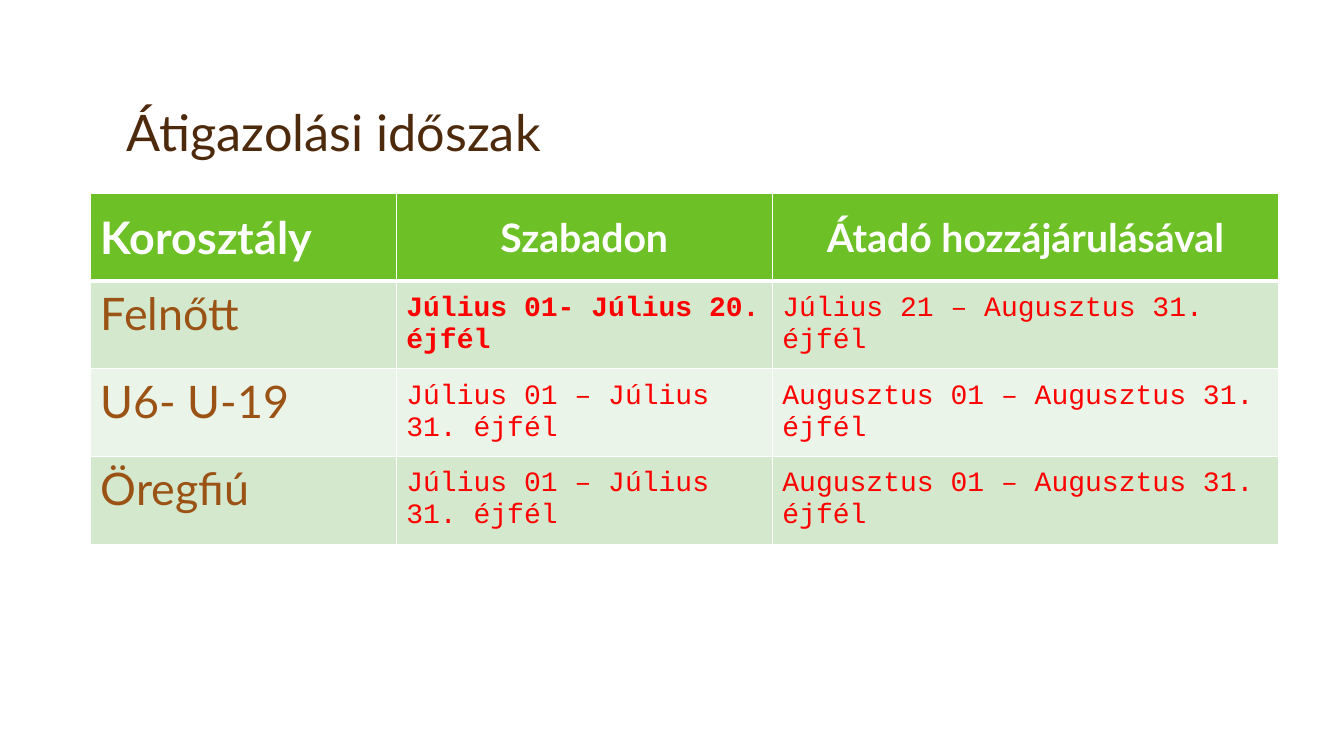
from lxml import etree
from pptx import Presentation
from pptx.dml.color import RGBColor
from pptx.enum.text import MSO_ANCHOR, PP_ALIGN
from pptx.oxml.ns import qn
from pptx.util import Inches, Pt

TOP, MIDDLE, BOTTOM = MSO_ANCHOR.TOP, MSO_ANCHOR.MIDDLE, MSO_ANCHOR.BOTTOM
LEFT, CENTER = PP_ALIGN.LEFT, PP_ALIGN.CENTER

WHITE = RGBColor(0xFF, 0xFF, 0xFF)
DARK_BROWN = RGBColor(0x4D, 0x2A, 0x0B)
BROWN = RGBColor(0x9A, 0x53, 0x15)
RED = RGBColor(0xFF, 0x00, 0x00)
GREEN = RGBColor(0x6D, 0xC0, 0x25)
BANDS = (RGBColor(0xD4, 0xE8, 0xCD), RGBColor(0xEB, 0xF4, 0xE8))

TITLE = "Átigazolási időszak"
HEADER = ("Korosztály", "Szabadon", "Átadó hozzájárulásával")
PERIODS = [
    ("Felnőtt", "Július 01- Július 20. éjfél", "Július 21 – Augusztus 31. éjfél"),
    ("U6- U-19", "Július 01 – Július 31. éjfél", "Augusztus 01 – Augusztus 31. éjfél"),
    ("Öregfiú", "Július 01 – Július 31. éjfél", "Augusztus 01 – Augusztus 31. éjfél"),
]
BOLD_PERIOD = (1, 1)
COLUMN_WIDTHS = (3.03, 3.73, 5.02)
ROW_HEIGHT = 0.87


def write(para, text, font, size, color, bold=False):
    span = para.add_run()
    span.text = text
    span.font.name = font
    span.font.size = Pt(size)
    span.font.color.rgb = color
    span.font.bold = bold


def add_borders(cell, bottom_width):
    properties = cell._tc.get_or_add_tcPr()
    for side, width in (("L", 1), ("R", 1), ("T", 1), ("B", bottom_width)):
        line = etree.SubElement(properties, qn(f"a:ln{side}"), w=str(Pt(width)))
        fill = etree.SubElement(line, qn("a:solidFill"))
        etree.SubElement(fill, qn("a:srgbClr"), val=str(WHITE))


def add_title(page):
    box = page.shapes.add_textbox(Inches(1.16), Inches(0.33), Inches(11), Inches(1.33))
    frame = box.text_frame
    frame.word_wrap = True
    frame.vertical_anchor = BOTTOM
    para = frame.paragraphs[0]
    para.line_spacing = 0.9
    write(para, TITLE, "Lato", 36, DARK_BROWN)


def add_period_table(page):
    rows = [HEADER] + PERIODS
    table = page.shapes.add_table(
        len(rows), len(HEADER), Inches(0.9), Inches(1.92),
        Inches(sum(COLUMN_WIDTHS)), Inches(ROW_HEIGHT * len(rows))).table
    for column, width in zip(table.columns, COLUMN_WIDTHS):
        column.width = Inches(width)
    for r, texts in enumerate(rows):
        table.rows[r].height = Inches(ROW_HEIGHT)
        is_header = r == 0
        for c, text in enumerate(texts):
            cell = table.cell(r, c)
            is_label = c == 0
            add_borders(cell, 3 if is_header else 1)
            cell.fill.solid()
            cell.fill.fore_color.rgb = GREEN if is_header else BANDS[(r - 1) % 2]
            cell.vertical_anchor = TOP if is_label and not is_header else MIDDLE
            para = cell.text_frame.paragraphs[0]
            para.alignment = CENTER if is_header and not is_label else LEFT
            if is_header:
                write(para, text, "Lato", 32 if is_label else 28, WHITE, True)
            elif is_label:
                write(para, text, "Lato", 32, BROWN)
            else:
                write(para, text, "Courier New", 20, RED, (r, c) == BOLD_PERIOD)


def main():
    deck = Presentation()
    deck.slide_width = Inches(13.33)
    deck.slide_height = Inches(7.5)
    page = deck.slides.add_slide(deck.slide_layouts[6])
    add_title(page)
    add_period_table(page)
    deck.save("out.pptx")


if __name__ == "__main__":
    main()
